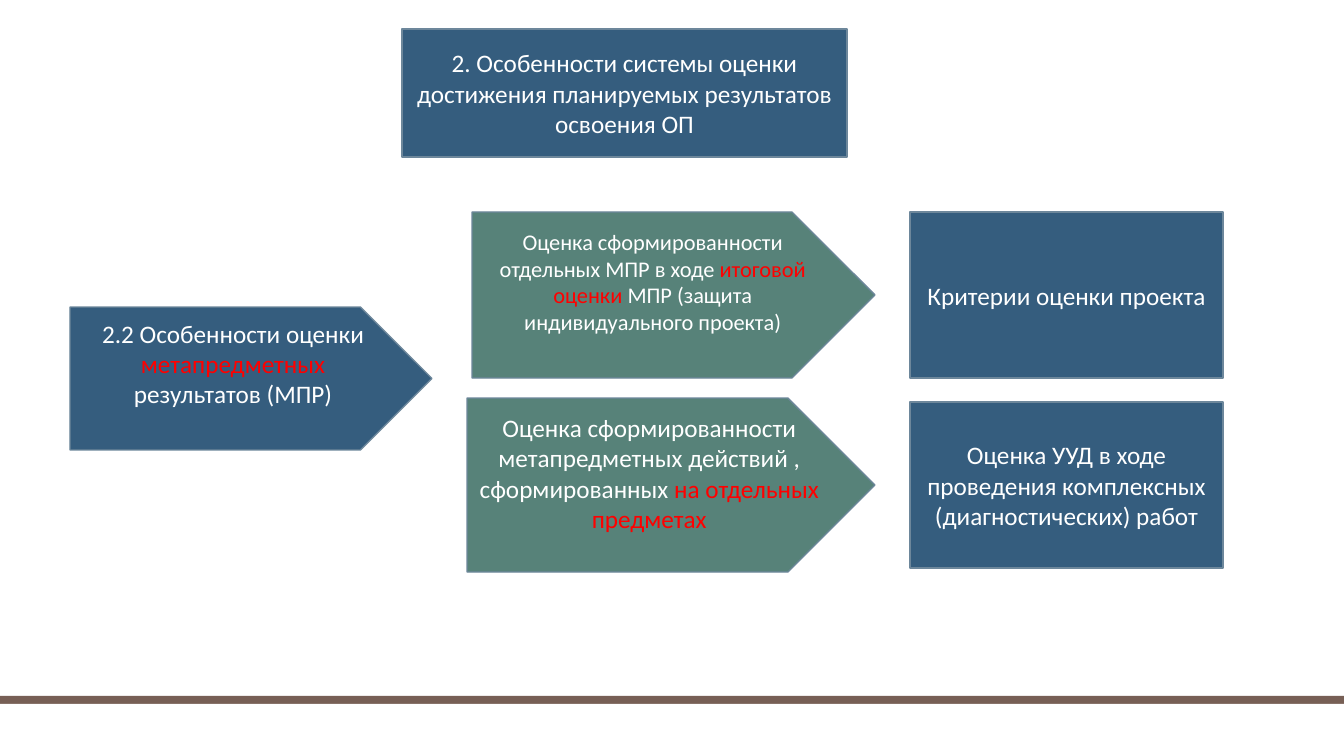
from dataclasses import dataclass

from pptx import Presentation
from pptx.dml.color import RGBColor
from pptx.enum.shapes import MSO_SHAPE as Shape
from pptx.enum.text import MSO_ANCHOR as Anchor, MSO_AUTO_SIZE as AutoSize, PP_ALIGN as Align
from pptx.util import Pt

EMU_PER_PX = 914400 / 100.8
SLIDE_WIDTH, SLIDE_HEIGHT = 1344, 756
TITLE_ONLY_LAYOUT = 5


@dataclass(frozen=True)
class Theme:
    font: str = "Calibri"
    blue: str = "355D7E"
    green: str = "578279"
    outline: str = "6D879B"
    brown: str = "775F55"
    white: str = "FFFFFF"
    red: str = "FF0000"
    body_size: int = 18
    small_size: int = 16


THEME = Theme()


def px(length):
    return round(length * EMU_PER_PX)


def color(value):
    return RGBColor.from_string(value)


def paint(shape, fill, outline=None):
    shape.fill.solid()
    shape.fill.fore_color.rgb = color(fill)
    if outline:
        shape.line.color.rgb = color(outline)
        shape.line.width = Pt(1)
    else:
        shape.line.fill.background()


def write(shape, text, size=THEME.body_size, bottom_inset=5):
    """Write centred text; parts between asterisks are highlighted."""
    frame = shape.text_frame
    frame.word_wrap = True
    frame.auto_size = AutoSize.NONE
    frame.vertical_anchor = Anchor.MIDDLE
    frame.margin_left = frame.margin_right = px(10)
    frame.margin_top, frame.margin_bottom = px(5), px(bottom_inset)
    paragraph = frame.paragraphs[0]
    paragraph.alignment = Align.CENTER
    for index, part in enumerate(text.split("*")):
        if not part:
            continue
        run = paragraph.add_run()
        run.text = part
        run.font.name = THEME.font
        run.font.size = Pt(size)
        run.font.color.rgb = color(THEME.red if index % 2 else THEME.white)


def add_block(slide, kind, box, fill, outline=None):
    shape = slide.shapes.add_shape(kind, *map(px, box))
    shape.shadow.inherit = False
    paint(shape, fill, outline)
    return shape


def add_arrow(slide, box, text, fill, **text_format):
    arrow = add_block(slide, Shape.PENTAGON, box, fill, THEME.outline)
    write(arrow, text, **text_format)


def add_card(slide, box, text):
    card = add_block(slide, Shape.RECTANGLE, box, THEME.blue, THEME.outline)
    write(card, text)


def format_title(slide, box, text):
    title = slide.shapes.title
    title.left, title.top, title.width, title.height = map(px, box)
    paint(title, THEME.blue, THEME.outline)
    write(title, text)


def add_footer_band(slide):
    add_block(slide, Shape.RECTANGLE, (0, 696, SLIDE_WIDTH, 11), THEME.brown)
    add_block(slide, Shape.RECTANGLE, (0, 704, SLIDE_WIDTH, 3), THEME.white)


def main():
    presentation = Presentation()
    presentation.slide_width = px(SLIDE_WIDTH)
    presentation.slide_height = px(SLIDE_HEIGHT)
    slide = presentation.slides.add_slide(presentation.slide_layouts[TITLE_ONLY_LAYOUT])

    add_footer_band(slide)
    format_title(slide, (402, 29, 445, 128),
                 "2. Особенности системы оценки достижения планируемых результатов освоения ОП")
    add_arrow(slide, (70, 307, 362, 143),
              "2.2 Особенности оценки *метапредметных *результатов (МПР)",
              THEME.blue, bottom_inset=35)
    add_arrow(slide, (472, 212, 403, 166),
              "Оценка сформированности отдельных МПР в ходе *итоговой оценки*"
              " МПР (защита индивидуального проекта)",
              THEME.green, size=THEME.small_size, bottom_inset=32)
    add_arrow(slide, (467, 398, 408, 174),
              "Оценка сформированности метапредметных действий , сформированных "
              "*на отдельных предметах*",
              THEME.green, bottom_inset=29)
    add_card(slide, (910, 212, 313, 166), "Критерии оценки проекта")
    add_card(slide, (910, 402, 313, 166),
             "Оценка УУД в ходе проведения комплексных (диагностических) работ")

    presentation.save("out.pptx")


if __name__ == "__main__":
    main()
